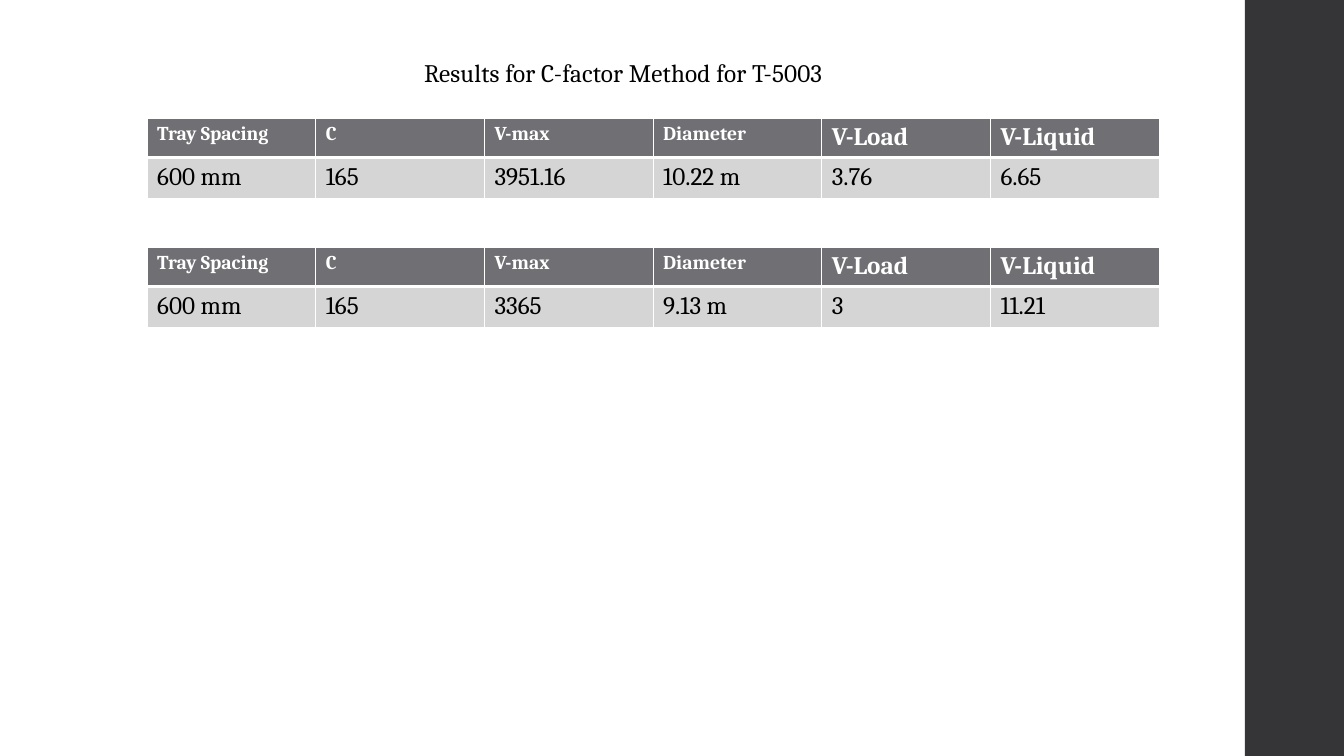
from lxml import etree
from pptx import Presentation
from pptx.dml.color import RGBColor
from pptx.enum.shapes import MSO_SHAPE
from pptx.enum.text import MSO_ANCHOR, PP_ALIGN
from pptx.oxml.ns import qn
from pptx.util import Pt

RECT = MSO_SHAPE.RECTANGLE
MIDDLE = MSO_ANCHOR.MIDDLE
CENTER = PP_ALIGN.CENTER

WHITE = RGBColor(0xFF, 0xFF, 0xFF)
BLACK = RGBColor(0x00, 0x00, 0x00)
CHARCOAL = RGBColor(0x35, 0x35, 0x37)
GREY = RGBColor(0x6F, 0x6F, 0x74)
LIGHT_GREY = RGBColor(0xD5, 0xD5, 0xD6)

HEADERS = ["Tray Spacing", "C", "V-max", "Diameter", "V-Load", "V-Liquid"]
HEADER_SIZES = [14, 14, 14, 14, 18, 18]
ROW_HEIGHTS = [28.3, 29.2]
RESULTS = [
    (84.24, ["600 mm", "165", "3951.16", "10.22 m", "3.76", "6.65"]),
    (176.4, ["600 mm", "165", "3365", "9.13 m", "3", "11.21"]),
]


class SlideBuilder:
    """Holds the font and the current slide, and adds each kind of element."""

    def __init__(self, s, font):
        self.s = s
        self.font = font

    def set_text(self, p, text, size, color, bold=False):
        p.text = text
        for r in p.runs:
            r.font.name = self.font
            r.font.size = Pt(size)
            r.font.bold = bold
            r.font.color.rgb = color

    def bar(self, x, y, w, h, color):
        sp = self.s.shapes.add_shape(RECT, Pt(x), Pt(y), Pt(w), Pt(h))
        sp.shadow.inherit = False
        sp.fill.solid()
        sp.fill.fore_color.rgb = color
        sp.line.fill.background()

    def title(self, text, x, y, w, h):
        sp = self.s.shapes.title
        sp.left, sp.top, sp.width, sp.height = Pt(x), Pt(y), Pt(w), Pt(h)
        tf = sp.text_frame
        tf.word_wrap = True
        tf.vertical_anchor = MIDDLE
        p = tf.paragraphs[0]
        p.alignment = CENTER
        self.set_text(p, text, 18, BLACK)
        p.runs[0].font._element.set("spc", "10")

    def borders(self, cell, bottom):
        tcPr = cell._tc.get_or_add_tcPr()
        for side, width in zip("LRTB", (1, 1, 1, bottom)):
            ln = etree.SubElement(tcPr, qn(f"a:ln{side}"), w=str(Pt(width)))
            fill = etree.SubElement(ln, qn("a:solidFill"))
            etree.SubElement(fill, qn("a:srgbClr"), val=str(WHITE))

    def cell(self, cell, text, size, color, fill, bold, bottom):
        self.borders(cell, bottom)
        cell.fill.solid()
        cell.fill.fore_color.rgb = fill
        self.set_text(cell.text_frame.paragraphs[0], text, size, color, bold)

    def table(self, x, y, w, values):
        frame = self.s.shapes.add_table(
            2, len(HEADERS), Pt(x), Pt(y), Pt(w), Pt(sum(ROW_HEIGHTS)))
        table = frame.table
        for row, height in zip(table.rows, ROW_HEIGHTS):
            row.height = Pt(height)
        for i, (header, size, value) in enumerate(
                zip(HEADERS, HEADER_SIZES, values)):
            table.columns[i].width = Pt(w / len(HEADERS))
            self.cell(table.cell(0, i), header, size, WHITE, GREY, True, 3)
            self.cell(table.cell(1, i), value, 18, BLACK, LIGHT_GREY, False, 1)


def main():
    prs = Presentation()
    prs.slide_width, prs.slide_height = Pt(960), Pt(540)
    s = prs.slides.add_slide(prs.slide_layouts[5])
    builder = SlideBuilder(s, "Cambria")
    builder.bar(889.2, 0, 70.8, 540, CHARCOAL)
    builder.title("Results for C-factor Method for T-5003", 0, 36, 890.64, 31)
    for top, values in RESULTS:
        builder.table(105.12, top, 722.88, values)
    prs.save("out.pptx")


if __name__ == "__main__":
    main()
